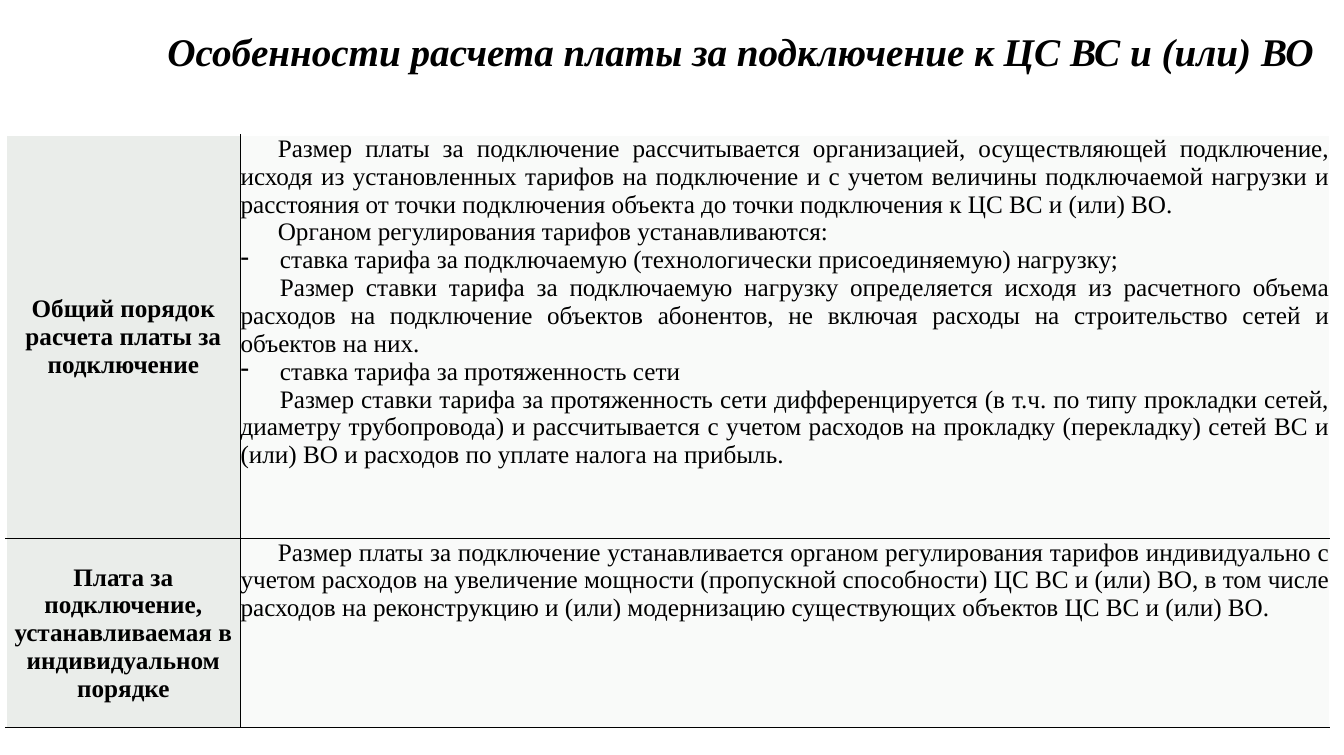
from dataclasses import dataclass

from lxml import etree
from pptx import Presentation, util as u
from pptx.dml.color import RGBColor
from pptx.enum import text as t
from pptx.oxml import parse_xml
from pptx.oxml.ns import nsdecls, qn

PX = u.Inches(0.01)


@dataclass(frozen=True)
class Theme:
    font: str = "Times New Roman"
    ink: str = "000000"
    tint: str = "CCD2CC"
    head_alpha: int = 40
    body_alpha: int = 10
    title: int = 28
    body: int = 18
    rule: int = 1


# Paragraph kinds: left margin, first-line indent, bullet
PLAIN = (0, 37, None)
ITEM = (39, -39, "-")
NOTE = (0, 39, None)

ROWS = [
    (401, "rb", "lb", "Общий порядок расчета платы за подключение", [
        (PLAIN, "Размер платы за подключение рассчитывается организацией, "
                "осуществляющей подключение, исходя из установленных тарифов на "
                "подключение и с учетом величины подключаемой нагрузки и расстояния "
                "от точки подключения объекта до точки подключения к ЦС ВС и (или) ВО."),
        (PLAIN, "Органом регулирования тарифов устанавливаются:"),
        (ITEM, "ставка тарифа за подключаемую (технологически присоединяемую) нагрузку;"),
        (NOTE, "Размер ставки тарифа за подключаемую нагрузку определяется исходя из "
               "расчетного объема расходов на подключение объектов абонентов, не включая "
               "расходы на строительство сетей и объектов на них."),
        (ITEM, "ставка тарифа за протяженность сети"),
        (NOTE, "Размер ставки тарифа за протяженность сети дифференцируется (в т.ч. по "
               "типу прокладки сетей, диаметру трубопровода) и рассчитывается с учетом "
               "расходов на прокладку (перекладку) сетей ВС и (или) ВО и расходов по "
               "уплате налога на прибыль."),
    ]),
    (188, "rtb", "ltb", "Плата за подключение, устанавливаемая в индивидуальном порядке", [
        (PLAIN, "Размер платы за подключение устанавливается органом регулирования тарифов "
                "индивидуально с учетом расходов на увеличение мощности (пропускной "
                "способности) ЦС ВС и (или) ВО, в том числе расходов на реконструкцию и "
                "(или) модернизацию существующих объектов ЦС ВС и (или) ВО."),
    ]),
]


class Deck:
    def __init__(self, theme, wide, high):
        self.theme = theme
        self.prs = Presentation()
        self.prs.slide_width, self.prs.slide_height = wide * PX, high * PX
        self.slide = self.prs.slides.add_slide(self.prs.slide_layouts[6])

    def style(self, par, size, align, bold=False, italic=False):
        par.alignment = align
        font = par.font
        font.name, font.size = self.theme.font, u.Pt(size)
        font.bold, font.italic = bold, italic
        font.color.rgb = RGBColor.from_string(self.theme.ink)

    def title(self, words, *box):
        frame = self.slide.shapes.add_textbox(*(n * PX for n in box)).text_frame
        frame.word_wrap = True
        frame.vertical_anchor = t.MSO_ANCHOR.MIDDLE
        frame.margin_left = frame.margin_right = 5 * PX
        frame.margin_top = frame.margin_bottom = 5 * PX
        par = frame.paragraphs[0]
        par.text = words
        par.line_spacing = 0.85
        self.style(par, self.theme.title, t.PP_ALIGN.CENTER, True, True)

    def table(self, left, top, cols, rows):
        high = sum(row[0] for row in rows)
        grid = self.slide.shapes.add_table(
            len(rows), len(cols), left * PX, top * PX, sum(cols) * PX, high * PX).table
        grid.first_row = grid.horz_banding = False
        for col, wide in zip(grid.columns, cols):
            col.width = wide * PX
        for i, (tall, head_sides, body_sides, head, body) in enumerate(rows):
            grid.rows[i].height = tall * PX
            self.head(grid.cell(i, 0), head_sides, head)
            self.body(grid.cell(i, 1), body_sides, body)

    def head(self, cell, sides, words):
        self.frame(cell, sides, self.theme.head_alpha)
        cell.vertical_anchor = t.MSO_ANCHOR.MIDDLE
        par = cell.text_frame.paragraphs[0]
        par.text = words
        self.style(par, self.theme.body, t.PP_ALIGN.CENTER, True)

    def body(self, cell, sides, items):
        self.frame(cell, sides, self.theme.body_alpha)
        frame = cell.text_frame
        for i, ((margin, indent, mark), words) in enumerate(items):
            par = frame.add_paragraph() if i else frame.paragraphs[0]
            par.text = words
            props = par._p.get_or_add_pPr()
            props.set("marL", str(margin * PX))
            props.set("indent", str(indent * PX))
            if mark:
                etree.SubElement(props, qn("a:buChar"), char=mark)
            self.style(par, self.theme.body, t.PP_ALIGN.JUSTIFY)

    def frame(self, cell, sides, alpha):
        """Set a cell's margins, its ruled sides (letters of l, r, t, b) and its tint."""
        cell.margin_left = cell.margin_right = 0
        cell.margin_top = cell.margin_bottom = 0
        props = cell._tc.get_or_add_tcPr()
        for side in "lrtb":
            if side in sides:
                props.append(parse_xml(
                    f'<a:ln{side.upper()} {nsdecls("a")} w="{u.Pt(self.theme.rule)}">'
                    f'<a:solidFill><a:srgbClr val="{self.theme.ink}"/></a:solidFill>'
                    f'</a:ln{side.upper()}>'))
        cell.fill.solid()
        cell.fill.fore_color.rgb = RGBColor.from_string(self.theme.tint)
        tint = props.find(qn("a:solidFill")).find(qn("a:srgbClr"))
        etree.SubElement(tint, qn("a:alpha"), val=str(alpha * 1000))


def main():
    deck = Deck(Theme(), 1335, 750)
    deck.title("Особенности расчета платы за подключение к ЦС ВС и (или) ВО",
               150, 21, 1171, 67)
    deck.table(6, 134, (233, 1082), ROWS)
    deck.prs.save("out.pptx")


if __name__ == "__main__":
    main()
